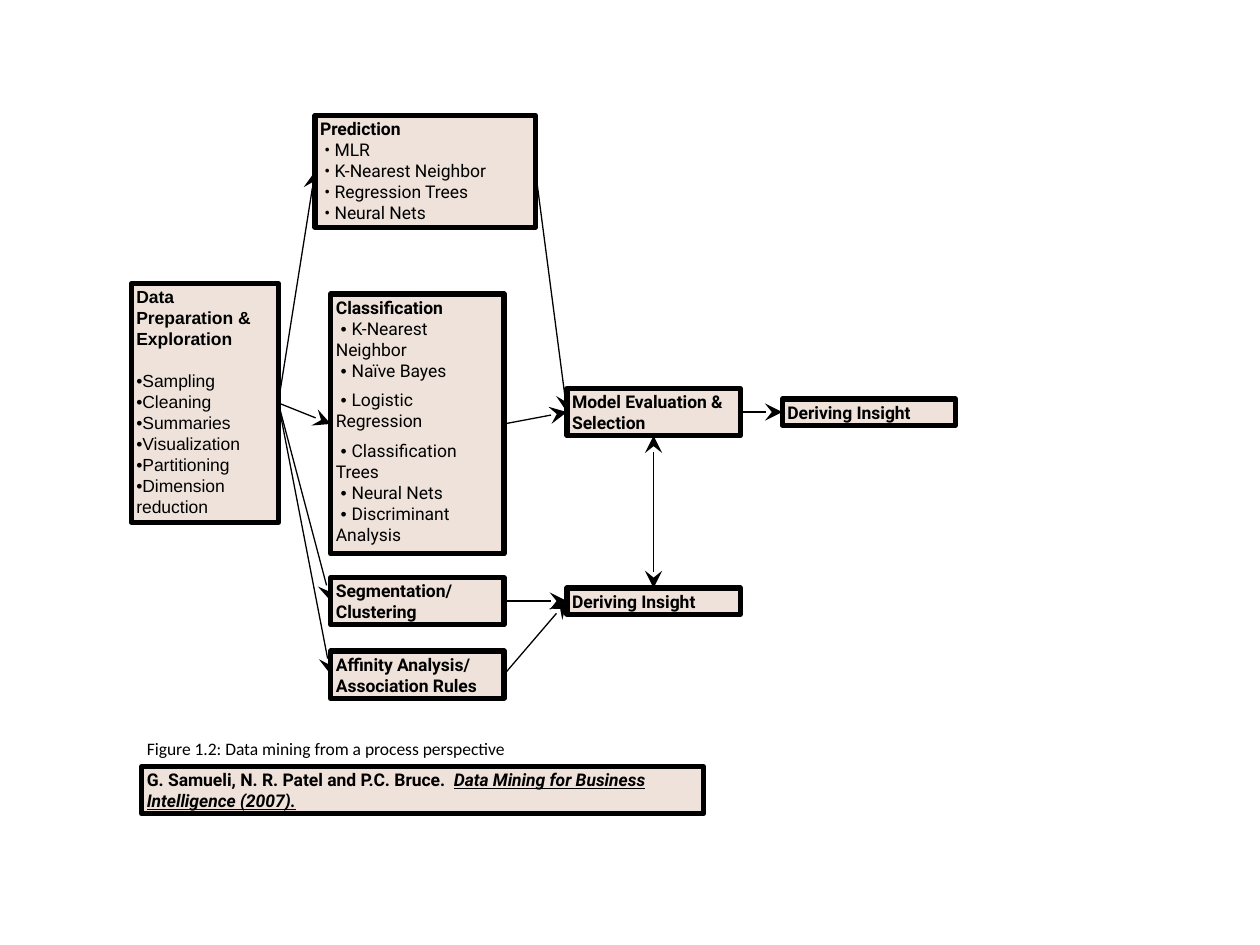
from lxml.etree import SubElement
from pptx import Presentation
from pptx.dml.color import RGBColor
from pptx.enum.shapes import MSO_CONNECTOR, MSO_SHAPE
from pptx.enum.text import MSO_ANCHOR, PP_ALIGN
from pptx.oxml.ns import qn
from pptx.util import Inches, Pt

COLUMNS, ROWS = 240, 180
WIDTH, HEIGHT = Inches(10), Inches(7.5)
INK, SAND = "000000", "EEE2DA"
TOP, LEFT, BOTTOM, RIGHT = range(4)
STEP_WIDTH, TWO_LINES, ONE_LINE = 33, 9, 5
METHODS, EVALUATION, OUTCOME = 63, 108, 149


def color(code):
    return RGBColor.from_string(code)


def place(column, row, columns, rows):
    return (int(WIDTH * column / COLUMNS), int(HEIGHT * row / ROWS),
            int(WIDTH * columns / COLUMNS), int(HEIGHT * rows / ROWS))


def write(paragraph, text, font="Roboto", size=10, bold=False, italic=False, underline=False):
    for number, line in enumerate(text.split("\n")):
        if number:
            paragraph.add_line_break()
        run = paragraph.add_run()
        run.text = line
        run.font.name = font
        run.font.size = Pt(size)
        run.font.bold = bold
        run.font.italic = italic
        run.font.underline = underline
        run.font.color.rgb = color(INK)


def set_frame(frame, anchor=MSO_ANCHOR.TOP):
    frame.word_wrap = True
    frame.vertical_anchor = anchor
    frame.margin_left = frame.margin_right = Inches(0.04)
    frame.margin_top = frame.margin_bottom = Inches(0.02)
    frame.paragraphs[0].alignment = PP_ALIGN.LEFT


def add_line(frame, space_before=0):
    paragraph = frame.add_paragraph()
    paragraph.alignment = PP_ALIGN.LEFT
    paragraph.space_before = Pt(space_before)
    return paragraph


def add_step(slide, title, column, row, columns=STEP_WIDTH, rows=TWO_LINES, font="Roboto"):
    step = slide.shapes.add_shape(MSO_SHAPE.RECTANGLE, *place(column, row, columns, rows))
    step.shadow.inherit = False
    step.fill.solid()
    step.fill.fore_color.rgb = color(SAND)
    step.line.color.rgb = color(INK)
    step.line.width = Pt(3)
    set_frame(step.text_frame)
    write(step.text_frame.paragraphs[0], title, font=font, bold=True)
    return step


def add_items(step, items, bullet, font="Roboto", bullet_font=None, gaps=None):
    for item in items:
        paragraph = add_line(step.text_frame, (gaps or {}).get(item, 0))
        write(paragraph, bullet, font=bullet_font or font)
        write(paragraph, item, font=font)


def add_arrow(slide, start, start_side, end, end_side, ends=("tailEnd",)):
    arrow = slide.shapes.add_connector(MSO_CONNECTOR.STRAIGHT, 0, 0, 0, 0)
    arrow.begin_connect(start, start_side)
    arrow.end_connect(end, end_side)
    arrow.line.color.rgb = color(INK)
    arrow.line.width = Pt(0.75)
    outline = arrow.line._get_or_add_ln()
    for tip in ends:
        SubElement(outline, qn(f"a:{tip}"), type="stealth", w="lg", len="lg")
    SubElement(arrow._element.spPr, qn("a:effectLst"))
    slide.shapes._spTree.insert(2, arrow._element)


def add_caption(slide, text, column, row, columns, rows):
    caption = slide.shapes.add_textbox(*place(column, row, columns, rows))
    set_frame(caption.text_frame, MSO_ANCHOR.MIDDLE)
    write(caption.text_frame.paragraphs[0], text, font="Calibri")


def main():
    deck = Presentation()
    deck.slide_width, deck.slide_height = WIDTH, HEIGHT
    slide = deck.slides.add_slide(deck.slide_layouts[6])

    preparation = add_step(slide, "Data Preparation & Exploration", 25, 54, 28, 45.5, font="Arial")
    add_items(preparation, ["Sampling", "Cleaning", "Summaries", "Visualization",
                            "Partitioning", "Dimension reduction"],
              "•", font="Arial", gaps={"Sampling": 12})

    prediction = add_step(slide, "Prediction", 60, 22, 42, 21.3)
    add_items(prediction, ["MLR", "K-Nearest Neighbor", "Regression Trees", "Neural Nets"], " • ")

    classification = add_step(slide, "Classification", METHODS, 56, rows=49.5)
    add_items(classification, ["K-Nearest\nNeighbor", "Naïve Bayes", "Logistic Regression",
                               "Classification Trees", "Neural Nets", "Discriminant Analysis"],
              " • ", bullet_font="Arial",
              gaps={"Logistic Regression": 5, "Classification Trees": 5})

    segmentation = add_step(slide, "Segmentation/Clustering", METHODS, 110)
    affinity = add_step(slide, "Affinity Analysis/ Association Rules", METHODS, 124)
    evaluation = add_step(slide, "Model Evaluation & Selection", EVALUATION, 74)
    insight = add_step(slide, "Deriving Insight", EVALUATION, 112, rows=ONE_LINE)
    final_insight = add_step(slide, "Deriving Insight", OUTCOME, 76, rows=ONE_LINE)

    for method, result in ((prediction, evaluation), (classification, evaluation),
                           (segmentation, insight), (affinity, insight)):
        add_arrow(slide, preparation, RIGHT, method, LEFT)
        add_arrow(slide, method, RIGHT, result, LEFT)
    add_arrow(slide, evaluation, RIGHT, final_insight, LEFT)
    add_arrow(slide, evaluation, BOTTOM, insight, TOP, ends=("headEnd", "tailEnd"))

    add_caption(slide, "Figure 1.2: Data mining from a process perspective", 27, 140, 78, 5)
    citation = add_step(slide, "G. Samueli, N. R. Patel and P.C. Bruce.  ", 27, 146, 107)
    write(citation.text_frame.paragraphs[0], "Data Mining for Business Intelligence (2007).",
          bold=True, italic=True, underline=True)

    deck.save("out.pptx")


if __name__ == "__main__":
    main()
